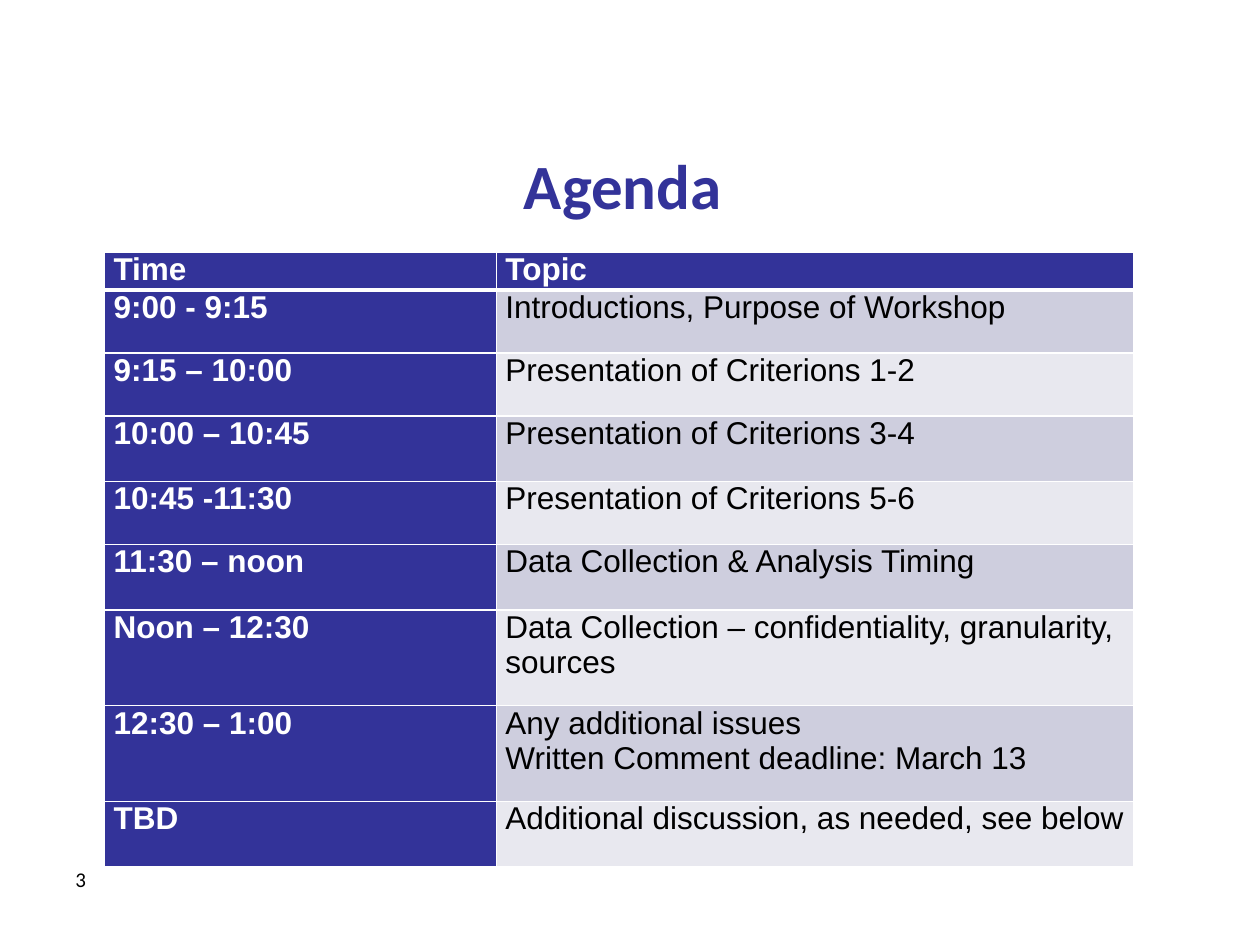
from typing import NamedTuple

from lxml.etree import SubElement
from pptx import Presentation
from pptx.dml.color import RGBColor
from pptx.enum.text import MSO_ANCHOR as Anchor, PP_ALIGN as Align
from pptx.oxml.ns import qn
from pptx.util import Cm, Pt

NAVY, WHITE, BLACK = "333399", "FFFFFF", "000000"
BANDS = ("CECEDE", "E8E8EF")


class Slot(NamedTuple):
    time: str
    topics: tuple[str, ...]
    height: float  # cm


class Style(NamedTuple):
    font: str
    size: float
    color: str
    bold: bool = False


AGENDA = [
    Slot("Time", ("Topic",), 0.66),
    Slot("9:00 - 9:15", ("Introductions, Purpose of Workshop",), 1.27),
    Slot("9:15 – 10:00", ("Presentation of Criterions 1-2",), 1.27),
    Slot("10:00 – 10:45", ("Presentation of Criterions 3-4",), 1.32),
    Slot("10:45 -11:30", ("Presentation of Criterions 5-6",), 1.27),
    Slot("11:30 – noon", ("Data Collection & Analysis Timing",), 1.32),
    Slot("Noon – 12:30", ("Data Collection – confidentiality, granularity, sources",), 1.93),
    Slot("12:30 – 1:00", ("Any additional issues", "Written Comment deadline: March 13"), 1.93),
    Slot("TBD", ("Additional discussion, as needed, see below",), 1.32),
]
HEADING = Style("Arial", 18, WHITE, True)
BODY = Style("Arial", 18, BLACK)


def rgb(color: str) -> RGBColor:
    return RGBColor.from_string(color)


def add_text(tf, lines: tuple[str, ...], style: Style, align=Align.LEFT) -> None:
    for i, line in enumerate(lines):
        p = tf.add_paragraph() if i else tf.paragraphs[0]
        p.alignment = align
        r = p.add_run()
        r.text = line
        r.font.name, r.font.size, r.font.bold = style.font, Pt(style.size), style.bold
        r.font.color.rgb = rgb(style.color)


def add_box(s, left: float, top: float, width: float, height: float,
            text: str, style: Style, align=Align.LEFT, anchor=Anchor.TOP) -> None:
    sp = s.shapes.add_textbox(Cm(left), Cm(top), Cm(width), Cm(height))
    tf = sp.text_frame
    tf.word_wrap = True
    tf.vertical_anchor = anchor
    add_text(tf, (text,), style, align)


def set_borders(cell, top: float, bottom: float) -> None:
    tc_pr = cell._tc.get_or_add_tcPr()
    widths = {"a:lnL": 1, "a:lnR": 1, "a:lnT": top, "a:lnB": bottom}
    for i, (tag, width) in enumerate(widths.items()):
        ln = SubElement(tc_pr, qn(tag), w=str(Pt(width)))
        fill = SubElement(ln, qn("a:solidFill"))
        SubElement(fill, qn("a:srgbClr"), val=WHITE)
        tc_pr.insert(i, ln)  # borders come before the cell fill


def fill_cell(cell, lines: tuple[str, ...], style: Style, color: str, row: int) -> None:
    cell.margin_left = cell.margin_right = Cm(0.18)
    cell.margin_top = cell.margin_bottom = 0
    cell.fill.solid()
    cell.fill.fore_color.rgb = rgb(color)
    add_text(cell.text_frame, lines, style)
    set_borders(cell, 3 if row == 1 else 1, 3 if row == 0 else 1)


def add_agenda(s, slots: list[Slot]) -> None:
    height = sum(slot.height for slot in slots)
    frame = s.shapes.add_table(len(slots), 2, Cm(2.11), Cm(5.08), Cm(20.75), Cm(height))
    table = frame.table
    for column, width in zip(table.columns, (7.9, 12.85)):
        column.width = Cm(width)
    for i, slot in enumerate(slots):
        table.rows[i].height = Cm(slot.height)
        fill_cell(table.cell(i, 0), (slot.time,), HEADING, NAVY, i)
        style, color = (BODY, BANDS[(i - 1) % 2]) if i else (HEADING, NAVY)
        fill_cell(table.cell(i, 1), slot.topics, style, color, i)


def main() -> None:
    prs = Presentation()
    prs.slide_width, prs.slide_height = Cm(25.4), Cm(19.05)
    s = prs.slides.add_slide(prs.slide_layouts[6])

    # Title
    add_box(s, 1.27, 2.34, 22.86, 2.74, "Agenda ", Style("Calibri", 36, NAVY, True),
            Align.CENTER, Anchor.MIDDLE)
    # Schedule
    add_agenda(s, AGENDA)
    # Page number
    add_box(s, 1.27, 17.35, 4.65, 1.32, "3", Style("Calibri", 12, BLACK))

    prs.save("out.pptx")


if __name__ == "__main__":
    main()
